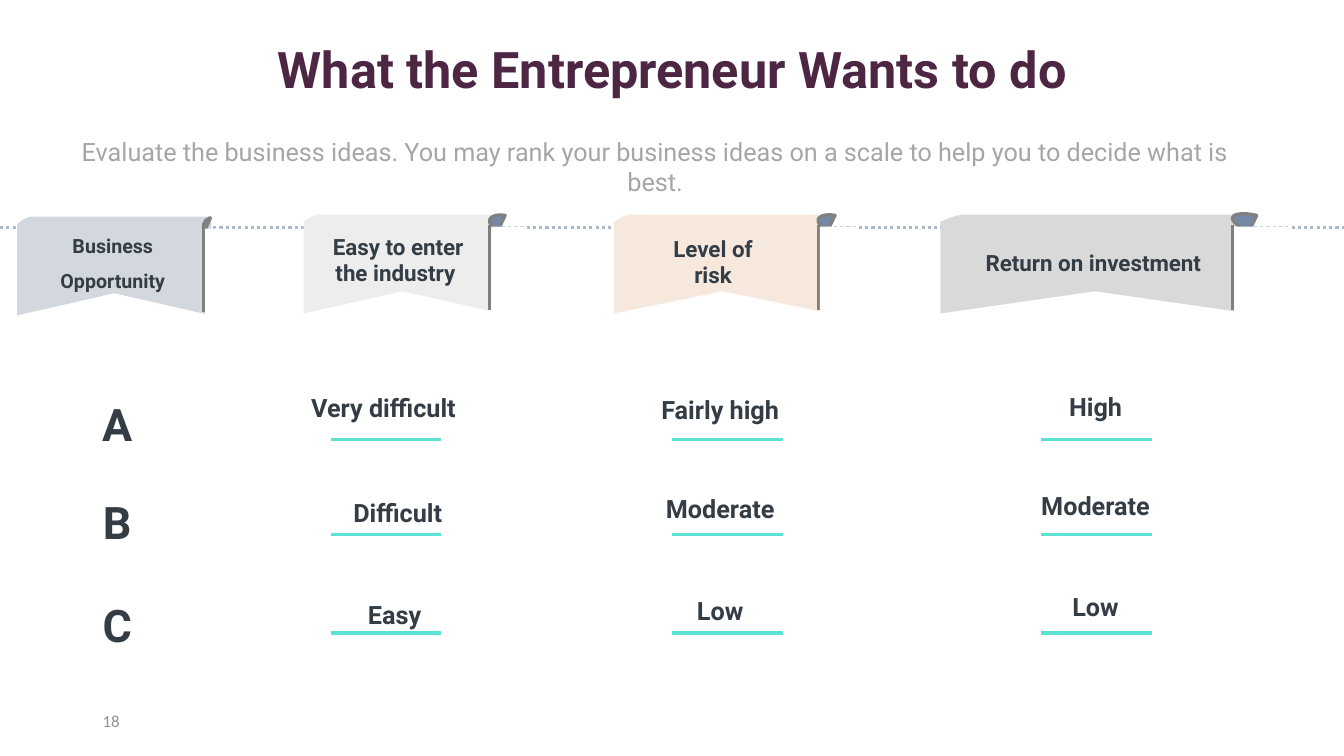
from dataclasses import dataclass

from lxml.etree import SubElement
from pptx import Presentation
from pptx.dml.color import RGBColor
from pptx.enum.dml import MSO_LINE
from pptx.enum.shapes import MSO_CONNECTOR as Connector, MSO_SHAPE as Preset
from pptx.enum.text import MSO_ANCHOR as Anchor, PP_ALIGN as Align
from pptx.oxml.ns import qn
from pptx.shapes.autoshape import Shape
from pptx.shapes.shapetree import GroupShapes, SlideShapes
from pptx.util import Cm, Pt

Shapes = SlideShapes | GroupShapes


@dataclass(frozen=True)
class Theme:
    font: str = "Roboto"
    number_font: str = "Calibri"
    title: str = "4D2643"
    subtitle: str = "A6A6A6"
    ink: str = "343D45"
    number: str = "909294"
    paper: str = "FFFFFF"
    dots: str = "ADB9CA"
    pole: str = "808080"
    curl: str = "7488A5"
    rule: str = "5AE2D2"
    title_size: float = 36
    letter_size: float = 32
    body_size: float = 18
    header_size: float = 16
    small_header_size: float = 14
    number_size: float = 12
    line_width: float = 2.25


@dataclass(frozen=True)
class Box:
    x: float
    y: float
    w: float
    h: float


@dataclass(frozen=True)
class Style:
    size: float
    color: str
    bold: bool = True
    font: str = Theme.font
    align: Align = Align.CENTER
    anchor: Anchor = Anchor.MIDDLE
    spacing: float = 1.0


@dataclass(frozen=True)
class Ribbon:
    x: float
    y: float
    w: float
    pole: float
    curl: float
    fill: str
    text: str
    box: Box
    style: Style


@dataclass(frozen=True)
class Column:
    x: float
    w: float
    h: float
    tops: tuple[float, ...]
    texts: tuple[str, ...]
    style: Style
    rule_x: float | None = None
    first_shift: float = 0


T = Theme()
TITLE = Style(T.title_size, T.title, anchor=Anchor.TOP)
SUBTITLE = Style(T.body_size, T.subtitle, bold=False, anchor=Anchor.TOP)
NUMBER = Style(T.number_size, T.number, False, T.number_font, Align.LEFT)
HEADER = Style(T.header_size, T.ink)
SMALL_HEADER = Style(T.small_header_size, T.ink, spacing=1.5)
LETTER = Style(T.letter_size, T.ink, spacing=1.5)
RATING = Style(T.body_size, T.ink, spacing=1.5)

SLIDE_W, SLIDE_H = 33.87, 19.05
DOTS_Y = 5.74
RIBBON_H, NOTCH_H = 2.49, 1.93
CURL_W = 0.43
RULE_W = 2.79
RULE_YS = (11.07, 13.46, 15.95)

RIBBONS = (
    Ribbon(23.7, 5.41, 7.8, 31.06, 1.3, "D9D9D9", "Return on investment ",
           Box(24.08, 5.91, 7.09, 1.4), HEADER),
    Ribbon(15.47, 5.41, 5.47, 20.62, 0.91, "F7E8DE", "Level of risk",
           Box(16.18, 5.89, 3.58, 1.4), HEADER),
    Ribbon(7.65, 5.41, 5, 12.34, 0.84, "EDEDED", "Easy to enter the industry ",
           Box(7.8, 5.84, 4.47, 1.4), HEADER),
    Ribbon(0.43, 5.46, 4.9, 5.13, 0.38, "D3D8DE", "Business Opportunity",
           Box(0.33, 5.79, 5.03, 1.4), SMALL_HEADER),
)

COLUMNS = (
    Column(2.08, 1.75, 1.57, (9.55, 12.01, 14.61), ("A", "B", "C"), LETTER),
    Column(6.86, 6.17, 1.7, (9.22, 11.86, 14.45),
           ("Very difficult ", " Difficult", "Easy"), RATING, 8.33, -0.2),
    Column(15.47, 5.36, 1.7, (9.27, 11.76, 14.35),
           ("Fairly high", "Moderate", "Low"), RATING, 16.94),
    Column(25.12, 4.98, 1.96, (9.07, 11.56, 14.12),
           ("High", "Moderate", "Low"), RATING, 26.24),
)


def add_text(shapes: Shapes, box: Box, text: str, style: Style) -> None:
    tb = shapes.add_textbox(Cm(box.x), Cm(box.y), Cm(box.w), Cm(box.h))
    tf = tb.text_frame
    tf.word_wrap = True
    tf.vertical_anchor = style.anchor
    p = tf.paragraphs[0]
    p.alignment = style.align
    p.line_spacing = style.spacing
    r = p.add_run()
    r.text = text
    r.font.name = style.font
    r.font.size = Pt(style.size)
    r.font.bold = style.bold
    r.font.color.rgb = RGBColor.from_string(style.color)


def add_line(shapes: Shapes, x1: float, y1: float, x2: float, y2: float,
             color: str, dash: MSO_LINE | None = None) -> None:
    ln = shapes.add_connector(Connector.STRAIGHT, Cm(x1), Cm(y1), Cm(x2), Cm(y2))
    ln.line.color.rgb = RGBColor.from_string(color)
    ln.line.width = Pt(T.line_width)
    if dash is not None:
        ln.line.dash_style = dash
    SubElement(ln._element.spPr, qn("a:effectLst"))


def paint(sp: Shape, fill: str, line: str | None = None) -> None:
    sp.shadow.inherit = False
    sp.fill.solid()
    sp.fill.fore_color.rgb = RGBColor.from_string(fill)
    if line is None:
        sp.line.fill.background()
    else:
        sp.line.color.rgb = RGBColor.from_string(line)
        sp.line.width = Pt(T.line_width)


def add_ribbon(slide_shapes: SlideShapes, rb: Ribbon) -> None:
    shapes = slide_shapes.add_group_shape().shapes
    outline = ((1, 0), (1, RIBBON_H), (0.5, NOTCH_H), (0, RIBBON_H),
               (0, 0.18), (0.01, 0.15), (0.03, 0.08), (0.05, 0.03))
    points = [(Cm(rb.x + fx * rb.w), Cm(rb.y + dy)) for fx, dy in outline]
    fb = shapes.build_freeform(Cm(rb.x + 0.07 * rb.w), Cm(rb.y))
    fb.add_line_segments(points)
    paint(fb.convert_to_shape(), rb.fill)

    curl = shapes.add_shape(
        Preset.CHORD, Cm(rb.pole + 0.48 * rb.curl - CURL_W / 2),
        Cm(rb.y + 0.24 - rb.curl / 2), Cm(CURL_W), Cm(rb.curl))
    curl.adjustments[0] = 35.73 * 0.6
    curl.adjustments[1] = 162 * 0.6
    curl.rotation = 105
    paint(curl, T.curl, T.pole)

    add_line(shapes, rb.pole, rb.y + 0.27, rb.pole, rb.y + 2.41, T.pole)
    flap = shapes.add_shape(Preset.RECTANGLE, Cm(rb.pole + 0.04), Cm(rb.y + 0.3),
                            Cm(1.07 * rb.curl), Cm(2.41))
    paint(flap, T.paper)
    add_text(slide_shapes, rb.box, rb.text, rb.style)


def add_column(shapes: Shapes, col: Column) -> None:
    for i, (top, text, rule_y) in enumerate(zip(col.tops, col.texts, RULE_YS)):
        x = col.x + (col.first_shift if i == 0 else 0)
        add_text(shapes, Box(x, top, col.w, col.h), text, col.style)
        if col.rule_x is not None:
            add_line(shapes, col.rule_x, rule_y, col.rule_x + RULE_W, rule_y, T.rule)


def main() -> None:
    prs = Presentation()
    prs.slide_width, prs.slide_height = Cm(SLIDE_W), Cm(SLIDE_H)
    s = prs.slides.add_slide(prs.slide_layouts[6])
    add_line(s.shapes, 0, DOTS_Y, SLIDE_W, DOTS_Y, T.dots, MSO_LINE.ROUND_DOT)
    add_text(s.shapes, Box(4.17, 0.84, 25.55, 1.8),
             "What the Entrepreneur Wants to do", TITLE)
    add_text(s.shapes, Box(1.17, 3.3, 30.68, 1.02),
             "Evaluate the business ideas. You may rank your business ideas "
             "on a scale to help you to decide what is best.", SUBTITLE)
    for rb in RIBBONS:
        add_ribbon(s.shapes, rb)
    for col in COLUMNS:
        add_column(s.shapes, col)
    add_text(s.shapes, Box(2.34, 17.65, 7.62, 1.02), "18", NUMBER)
    prs.save("out.pptx")


if __name__ == "__main__":
    main()
